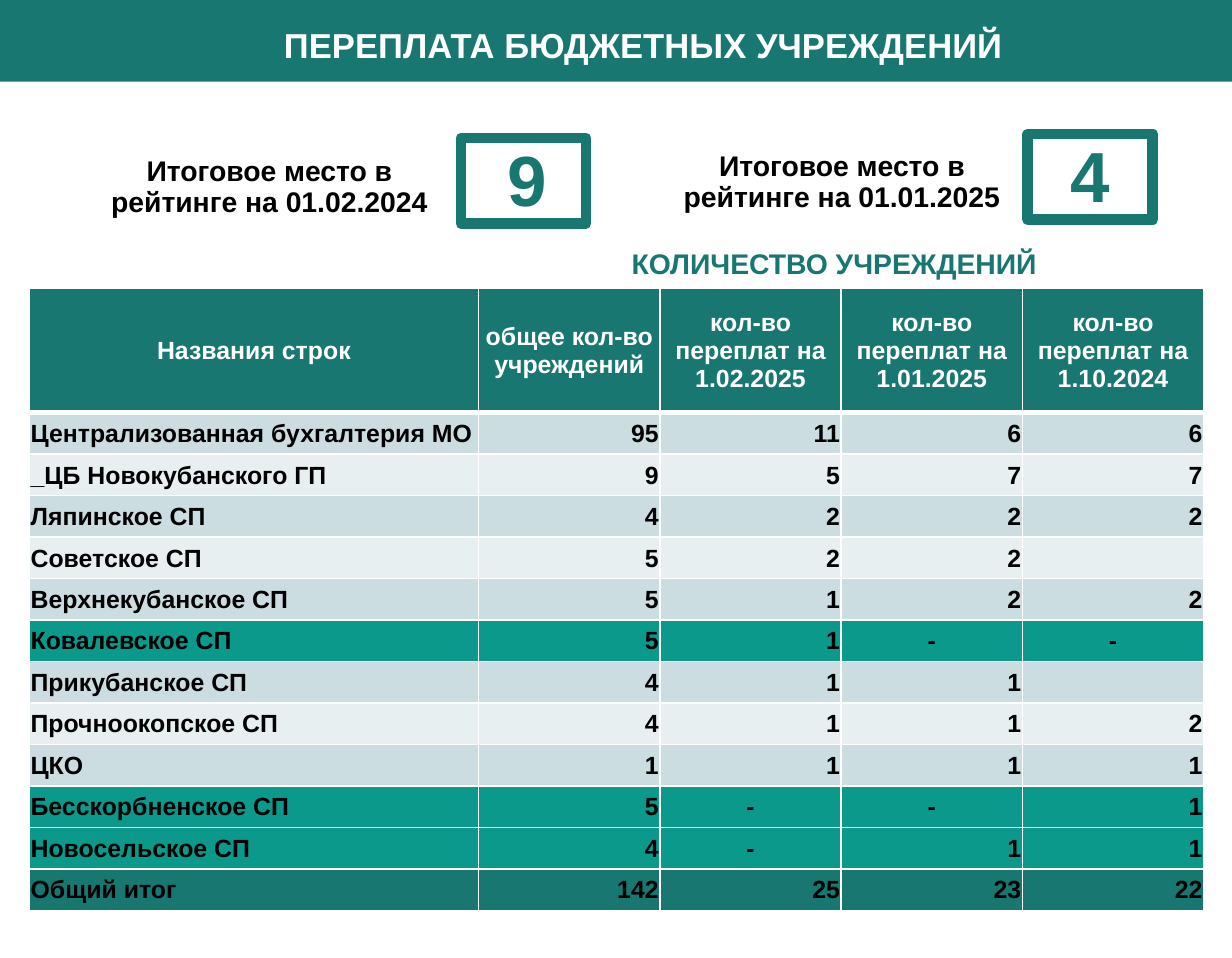
import pptx
import pptx.dml.color
import pptx.enum.shapes
import pptx.enum.text
import pptx.oxml
import pptx.oxml.ns
import pptx.util

Inches = pptx.util.Inches
Pt = pptx.util.Pt
ALIGN = pptx.enum.text.PP_ALIGN
MIDDLE = pptx.enum.text.MSO_ANCHOR.MIDDLE
FIT = pptx.enum.text.MSO_AUTO_SIZE

TEAL, BRIGHT, WHITE, BLACK = "187771", "0A998B", "FFFFFF", "000000"
STRIPES = ["E7EFF1", "CCDDE1"]

HEADER = ["Названия строк", "общее кол-во учреждений", "кол-во переплат на 1.02.2025",
          "кол-во переплат на 1.01.2025", "кол-во переплат на 1.10.2024"]
INSTITUTIONS = [
    ["Централизованная бухгалтерия МО", "95", "11", "6", "6"],
    ["_ЦБ Новокубанского ГП", "9", "5", "7", "7"],
    ["Ляпинское СП", "4", "2", "2", "2"],
    ["Советское СП", "5", "2", "2", ""],
    ["Верхнекубанское СП", "5", "1", "2", "2"],
    ["Ковалевское СП", "5", "1", "-", "-"],
    ["Прикубанское СП", "4", "1", "1", ""],
    ["Прочноокопское СП", "4", "1", "1", "2"],
    ["ЦКО", "1", "1", "1", "1"],
    ["Бесскорбненское СП", "5", "-", "-", "1"],
    ["Новосельское СП", "4", "-", "1", "1"],
]
TOTAL = ["Общий итог", "142", "25", "23", "22"]


def color(value):
    return pptx.dml.color.RGBColor.from_string(value)


class Deck:
    font = "Arial"

    def __init__(self, width, height):
        self.prs = pptx.Presentation()
        self.prs.slide_width = Inches(width)
        self.prs.slide_height = Inches(height)
        self.s = self.prs.slides.add_slide(self.prs.slide_layouts[5])

    def add_text(self, tf, text, size, fill, align=ALIGN.CENTER, spacing=None):
        p = tf.paragraphs[0]
        p.alignment = align
        if spacing:
            p.line_spacing = spacing
        r = p.add_run()
        r.text = text
        r.font.name = self.font
        r.font.size = Pt(size)
        r.font.bold = True
        r.font.color.rgb = color(fill)

    def caption(self, sp, text, size, fill):
        tf = sp.text_frame
        tf.word_wrap = True
        tf.auto_size = FIT.NONE
        tf.vertical_anchor = MIDDLE
        tf.margin_left = tf.margin_right = Inches(0.07)
        tf.margin_top = tf.margin_bottom = Inches(0.04)
        self.add_text(tf, text, size, fill, spacing=0.9)

    def title(self, box, text, size, fill):
        sp = self.s.shapes.title
        sp.left, sp.top, sp.width, sp.height = map(Inches, box)
        self.caption(sp, text, size, fill)

    def label(self, box, text, fill):
        self.caption(self.s.shapes.add_textbox(*map(Inches, box)), text, 16, fill)

    def number(self, box, text):
        tf = self.s.shapes.add_textbox(*map(Inches, box)).text_frame
        tf.word_wrap = True
        tf.auto_size = FIT.SHAPE_TO_FIT_TEXT
        self.add_text(tf, text, 40, TEAL)

    def rect(self, box, fill=None, line=None, weight=0):
        sp = self.s.shapes.add_shape(pptx.enum.shapes.MSO_SHAPE.RECTANGLE, *map(Inches, box))
        sp.shadow.inherit = False
        if fill:
            sp.fill.solid()
            sp.fill.fore_color.rgb = color(fill)
        else:
            sp.fill.background()
        if line:
            sp.line.color.rgb = color(line)
            sp.line.width = Pt(weight)
        else:
            sp.line.fill.background()
        return sp

    def band(self, box, fill):
        sp = self.rect(box, fill)
        self.s.shapes.title._element.addprevious(sp._element)

    def borders(self, cell, top, bottom):
        tcPr = cell._tc.get_or_add_tcPr()
        for i, (side, weight) in enumerate(zip("LRTB", (1, 1, top, bottom))):
            tcPr.insert(i, pptx.oxml.parse_xml(
                f'<a:ln{side} {pptx.oxml.ns.nsdecls("a")} w="{Pt(weight)}"><a:solidFill>'
                f'<a:srgbClr val="{WHITE}"/></a:solidFill></a:ln{side}>'))

    def cell(self, cell, text, align, ink, fill):
        cell.fill.solid()
        cell.fill.fore_color.rgb = color(fill)
        cell.vertical_anchor = MIDDLE
        cell.margin_left = cell.margin_right = cell.margin_top = Inches(0.01)
        cell.margin_bottom = 0
        if text:
            self.add_text(cell.text_frame, text, 14, ink, align)

    def table(self, box, widths, heights, rows):
        t = self.s.shapes.add_table(len(rows), len(widths), *map(Inches, box)).table
        for col, width in zip(t.columns, widths):
            col.width = Inches(width)
        for row, height in zip(t.rows, heights):
            row.height = Inches(height)
        last = len(rows) - 1
        for i, row in enumerate(rows):
            if i in (0, last):
                fill = TEAL
            else:
                fill = BRIGHT if "-" in row else STRIPES[i % 2]
            for j, text in enumerate(row):
                if i == 0 or text == "-":
                    align = ALIGN.CENTER
                else:
                    align = ALIGN.RIGHT if j else ALIGN.LEFT
                c = t.cell(i, j)
                self.cell(c, text, align, BLACK if i else WHITE, fill)
                self.borders(c, 3 if i == 1 else 1, 3 if i == 0 else 1)


def main():
    deck = Deck(9.65, 7.5)
    deck.band((0, -0.02, 9.65, 0.66), TEAL)
    deck.title((0.66, 0.05, 8.76, 0.64), "ПЕРЕПЛАТА БЮДЖЕТНЫХ УЧРЕЖДЕНИЙ", 19.5, WHITE)
    ratings = [
        ("01.02.2024", (0.62, 1.15, 2.98, 0.64), "9", (3.67, 1.01, 0.92, 0.77), (3.61, 1.08)),
        ("01.01.2025", (5.14, 1.11, 2.91, 0.64), "4", (8.05, 0.98, 0.98, 0.77), (8.05, 1.05)),
    ]
    for date, label_box, place, number_box, corner in ratings:
        deck.label(label_box, f"Итоговое место в рейтинге на {date}", BLACK)
        deck.number(number_box, place)
        deck.rect((*corner, 0.98, 0.67), line=TEAL, weight=6)
    deck.label((4.3, 1.94, 4.47, 0.28), "КОЛИЧЕСТВО УЧРЕЖДЕНИЙ", TEAL)
    rows = [HEADER, *INSTITUTIONS, TOTAL]
    body = (4.87 - 0.97) / (len(rows) - 1)
    deck.table((0.23, 2.26, 9.19, 4.87), [3.52] + [1.42] * 4,
               [0.97] + [body] * (len(rows) - 1), rows)
    deck.prs.save("out.pptx")


if __name__ == "__main__":
    main()
